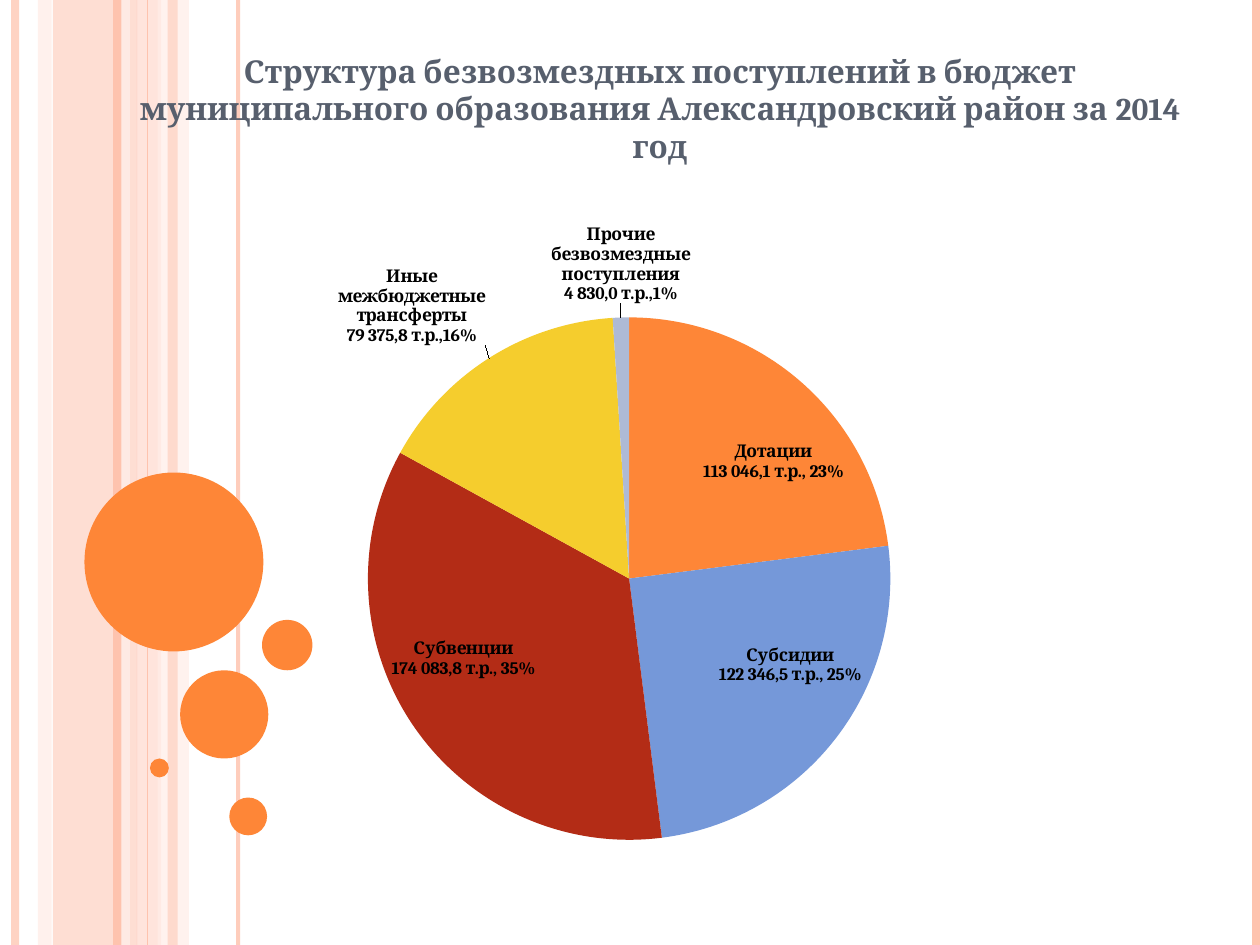
from dataclasses import dataclass

from lxml import etree
from pptx import Presentation
from pptx import util as u
from pptx.chart.data import CategoryChartData
from pptx.dml.color import RGBColor
from pptx.enum import chart as charts
from pptx.enum import shapes, text
from pptx.oxml.ns import qn


@dataclass(frozen=True)
class Theme:
    font: str = "Cambria"
    title_size: float = 18
    label_size: float = 10
    title: str = "575F6D"
    label: str = "000000"
    accent: str = "FE8637"
    stripe: str = "FEC3AE"
    pale: str = "FFD9CE"
    palest: str = "FFEDE8"
    slices: tuple = ("FE8637", "7598D9", "B32C16", "F5CD2D", "AEBAD5")


class SlideBuilder:
    def __init__(self, presentation, theme):
        self.theme = theme
        self.height = presentation.slide_height.inches
        # Layout 5 is "Title Only"
        self.slide = presentation.slides.add_slide(presentation.slide_layouts[5])

    def set_alpha(self, fill_owner, percent):
        for color in fill_owner.iter(qn("a:srgbClr")):
            etree.SubElement(color, qn("a:alpha"), val=str(percent * 1000))

    def style_run(self, run, size, color):
        run.font.name = self.theme.font
        run.font.size = u.Pt(size)
        run.font.bold = True
        run.font.color.rgb = RGBColor.from_string(color)

    def filled(self, kind, left, top, width, height, color, alpha=100):
        shape = self.slide.shapes.add_shape(
            kind, *map(u.Inches, (left, top, width, height)))
        shape.shadow.inherit = False
        shape.fill.solid()
        shape.fill.fore_color.rgb = RGBColor.from_string(color)
        shape.line.fill.background()
        if alpha < 100:
            self.set_alpha(shape.fill._xPr, alpha)

    def band(self, left, width, color, alpha):
        self.filled(shapes.MSO_SHAPE.RECTANGLE, left, 0, width, self.height,
                    color, alpha)

    def circle(self, left, top, diameter):
        self.filled(shapes.MSO_SHAPE.OVAL, left, top, diameter, diameter,
                    self.theme.accent)

    def vertical_line(self, x, color, weight, alpha=100):
        line = self.slide.shapes.add_connector(
            shapes.MSO_CONNECTOR.STRAIGHT, u.Inches(x), 0,
            u.Inches(x), u.Inches(self.height))
        line.line.color.rgb = RGBColor.from_string(color)
        line.line.width = u.Pt(weight)
        properties = line._element.spPr
        if alpha < 100:
            self.set_alpha(properties, alpha)
        etree.SubElement(properties, qn("a:effectLst"))

    def title(self, words, left, top, width, height):
        shape = self.slide.shapes.title
        shape.left, shape.top, shape.width, shape.height = map(
            u.Inches, (left, top, width, height))
        frame = shape.text_frame
        frame.word_wrap = True
        frame.auto_size = text.MSO_AUTO_SIZE.NONE
        frame.vertical_anchor = text.MSO_ANCHOR.TOP
        paragraph = frame.paragraphs[0]
        paragraph.alignment = text.PP_ALIGN.CENTER
        paragraph.space_before = u.Pt(6)
        run = paragraph.add_run()
        run.text = words
        self.style_run(run, self.theme.title_size, self.theme.title)
        # Keep the heading in front of the stripes
        self.slide.shapes._spTree.append(shape._element)

    def manual_layout(self, parent, index, **values):
        layout = etree.Element(qn("c:layout"))
        manual = etree.SubElement(layout, qn("c:manualLayout"))
        for name, value in values.items():
            etree.SubElement(manual, qn(f"c:{name}"), val=str(value))
        parent.insert(index, layout)

    def slice_label(self, point, category, amount, position, shift_x, shift_y):
        label = point.data_label
        frame = label.text_frame
        for number, words in enumerate((category, amount)):
            paragraph = frame.add_paragraph() if number else frame.paragraphs[0]
            run = paragraph.add_run()
            run.text = words
            self.style_run(run, self.theme.label_size, self.theme.label)
        label.position = position
        element = label._dLbl
        for name, shown in (("showVal", 0), ("showCatName", 1), ("showPercent", 1)):
            element.find(qn(f"c:{name}")).set("val", str(shown))
        self.manual_layout(element, 1, x=shift_x, y=shift_y)

    def pie(self, rows, left, top, width, height):
        data = CategoryChartData()
        data.categories = [row[0] for row in rows]
        data.add_series("Series 1", [row[1] for row in rows])
        chart = self.slide.shapes.add_chart(
            charts.XL_CHART_TYPE.PIE,
            *map(u.Inches, (left, top, width, height)), data).chart
        chart.has_legend = False
        chart.has_title = False
        chart.font.name = self.theme.font
        chart.font.size = u.Pt(18)
        chart.font.color.rgb = RGBColor.from_string(self.theme.label)

        plot = chart.plots[0]
        plot.vary_by_categories = True
        plot_area = chart._chartSpace.find(".//" + qn("c:plotArea"))
        for old in plot_area.findall(qn("c:layout")):
            plot_area.remove(old)
        self.manual_layout(plot_area, 0, layoutTarget="inner", xMode="edge",
                           yMode="edge", x=0.27, y=0.16, w=0.55, h=0.81)

        series = plot.series[0]
        for index, (category, _, amount, *placing) in enumerate(rows):
            point = series.points[index]
            point.format.fill.solid()
            point.format.fill.fore_color.rgb = RGBColor.from_string(
                self.theme.slices[index])
            point.format.line.fill.background()
            self.slice_label(point, category, amount, *placing)


def main():
    theme = Theme()
    presentation = Presentation()
    presentation.slide_width, presentation.slide_height = u.Inches(10), u.Inches(7.5)
    builder = SlideBuilder(presentation, theme)

    # Background bands: left, width, colour, opacity
    for band in ((0.42, 0.67, theme.stripe, 54), (0.3, 0.11, theme.pale, 36),
                 (1.08, 0.2, theme.pale, 70), (1.25, 0.25, theme.palest, 71)):
        builder.band(*band)

    # Thin vertical lines: x, colour, weight, opacity
    for line in ((0.12, theme.stripe, 4.5, 73), (1, theme.palest, 4.5, 83),
                 (0.93, theme.stripe, 4.5), (1.89, theme.stripe, 2.25, 82),
                 (1.17, theme.stripe, 0.75), (9.97, theme.stripe, 4.5)):
        builder.vertical_line(*line)
    builder.band(1.33, 0.08, theme.stripe, 51)

    # Decorative circles: left, top, diameter
    for circle in ((0.67, 3.75, 1.42), (1.43, 5.32, 0.7), (1.19, 6.02, 0.15),
                   (1.82, 6.33, 0.3), (2.08, 4.92, 0.4)):
        builder.circle(*circle)

    # Pie: category, share, amount, label position and shift
    inside = charts.XL_LABEL_POSITION.CENTER
    outside = charts.XL_LABEL_POSITION.OUTSIDE_END
    builder.pie((
        ("Дотации", 23, "113 046,1 т.р., 23%", inside, 0.06, -0.03),
        ("Субсидии", 25, "122 346,5 т.р., 25%", inside, 0.06, 0.01),
        ("Субвенции", 35, "174 083,8 т.р., 35%", inside, -0.06, 0.01),
        ("Иные межбюджетные трансферты", 16, "79 375,8 т.р.,16%", outside, 0, -0.01),
        ("Прочие безвозмездные поступления", 1, "4 830,0 т.р.,1%", outside, 0, -0.01),
    ), 0.83, 1.7, 7.64, 5.12)

    # Heading
    builder.title("Структура безвозмездных поступлений в бюджет муниципального "
                  "образования Александровский район за 2014 год",
                  0.83, 0.36, 8.82, 1.5)
    presentation.save("out.pptx")


if __name__ == "__main__":
    main()
